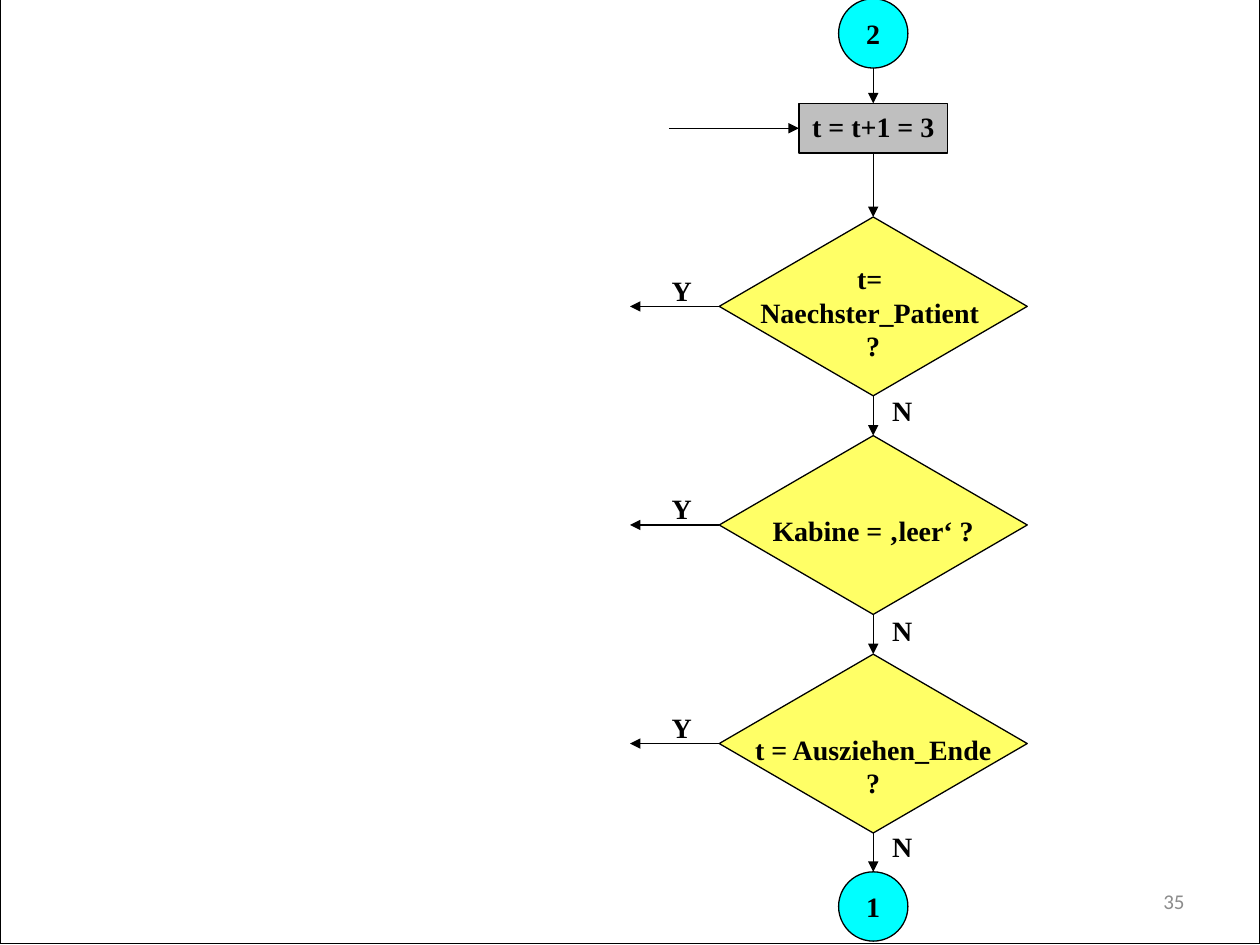
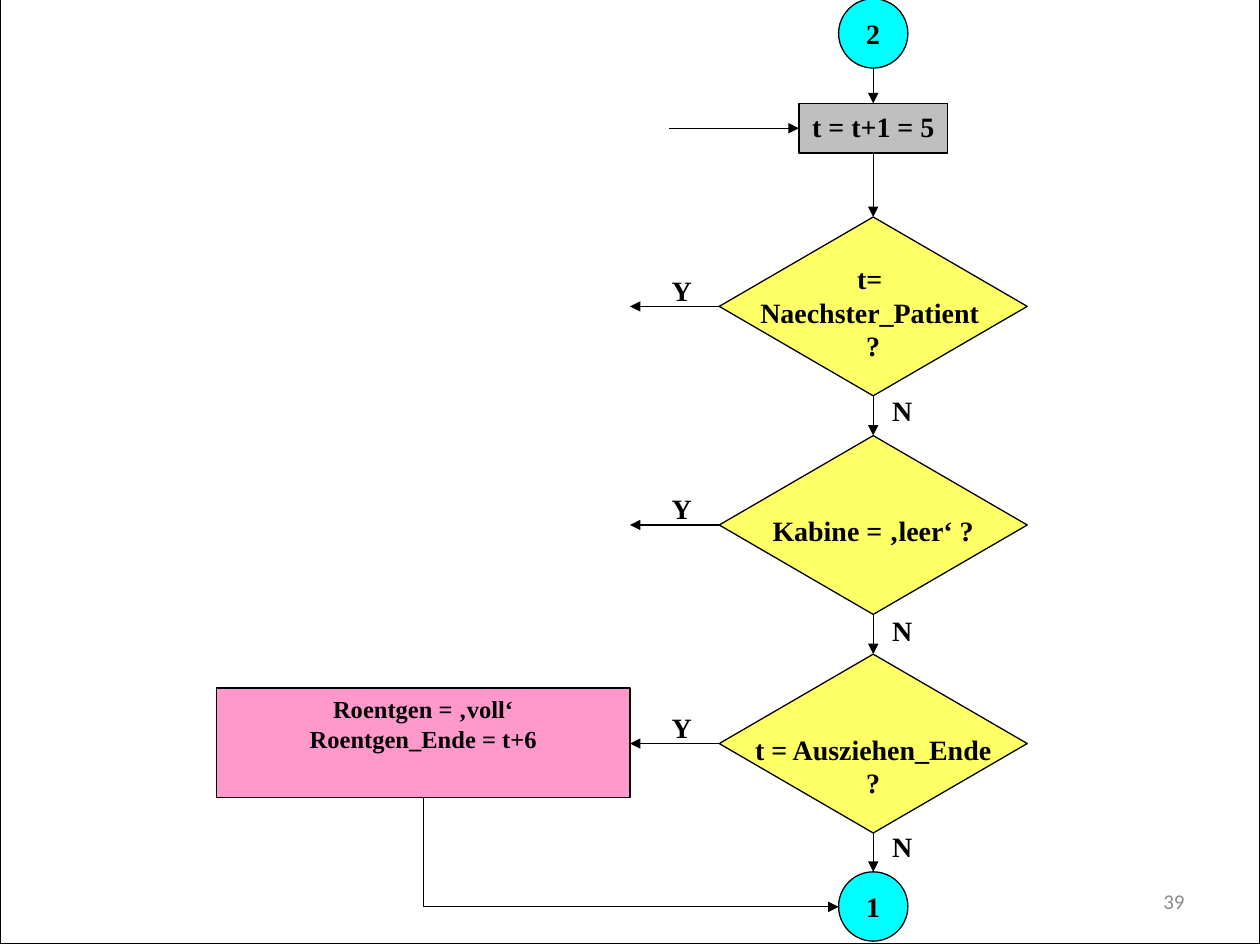
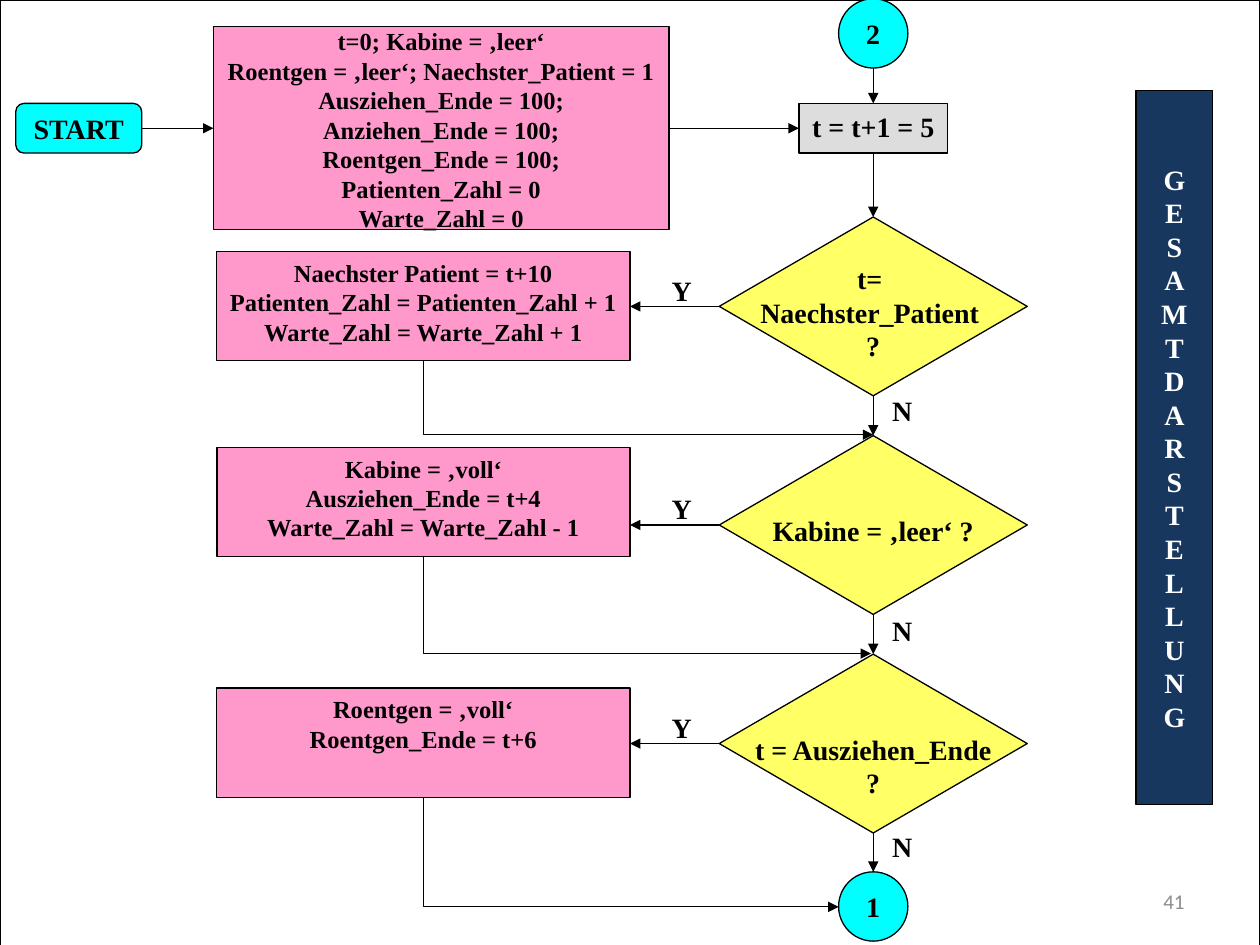
from collections import namedtuple
from dataclasses import dataclass

from lxml.etree import SubElement
from pptx import Presentation
from pptx.dml.color import RGBColor as RGB
from pptx.enum.shapes import MSO_CONNECTOR as LINE, MSO_SHAPE as SHAPE
from pptx.enum.text import MSO_ANCHOR as ANCHOR, PP_ALIGN as ALIGN
from pptx.oxml.ns import qn
from pptx.util import Pt

Box = namedtuple("Box", "x y w h")
Action = namedtuple("Action", "box lines target")


@dataclass(frozen=True)
class Theme:
    ink: str = "000000"
    paper: str = "FFFFFF"
    terminal: str = "00FFFF"
    decision: str = "FFFF66"
    action: str = "FF99CC"
    counter: str = "BFBFBF"
    counter_light: str = "DDDDDD"
    banner: str = "17375E"
    number: str = "8C8C8C"
    serif: str = "Times New Roman"
    sans: str = "Calibri"
    label_size: float = 16
    action_size: float = 14
    number_size: float = 12
    line: float = 0.75


T = Theme()

COLUMN = Box(411, -0.7, 176, 538.5)
DISC = 39.6
STEP = 124.9
DIAMOND_H = 102.2
ARROW_END = 360
ENTRY_X, ENTRY_Y = 382.3, 73.3

# Lines, top inset, and top of the "N" label relative to the diamond
DECISIONS = [
    (["t= ", "Naechster_Patient ", "?"], 0, 97.2),
    (["Kabine = ‚leer‘ ?"], 19, 98.4),
    (["t = Ausziehen_Ende", "?"], 19, 96.5),
]

ARRIVAL = Action(Box(123.8, 143.9, 236.2, 62.3),
                 ["Naechster Patient = t+10",
                  "Patienten_Zahl = Patienten_Zahl + 1",
                  "Warte_Zahl = Warte_Zahl + 1"], (499, 248.4))
UNDRESS = Action(Box(124, 255.7, 236, 62.3),
                 ["Kabine = ‚voll‘", "Ausziehen_Ende = t+4",
                  "Warte_Zahl = Warte_Zahl - 1"], (497.7, 373.5))
XRAY = Action(Box(123.8, 393.2, 236.2, 62.5),
              ["Roentgen = ‚voll‘", "Roentgen_Ende = t+6"], (479.2, 518.2))

INITIAL_VALUES = ["t=0; Kabine = ‚leer‘",
                  "Roentgen = ‚leer‘; Naechster_Patient = 1",
                  "Ausziehen_Ende = 100;", "Anziehen_Ende = 100;",
                  "Roentgen_Ende = 100;", "Patienten_Zahl = 0",
                  "Warte_Zahl = 0"]


def write(sp, lines, size=T.label_size, font=T.serif, color=T.ink, bold=True,
          align=ALIGN.CENTER, anchor=ANCHOR.TOP, insets=(7.2, 3.6, 7.2, 3.6),
          wrap=True):
    tf = sp.text_frame
    tf.word_wrap = wrap
    tf.vertical_anchor = anchor
    (tf.margin_left, tf.margin_top,
     tf.margin_right, tf.margin_bottom) = map(Pt, insets)
    for i, line in enumerate(lines):
        p = tf.paragraphs[0] if i == 0 else tf.add_paragraph()
        p.alignment = align
        r = p.add_run()
        r.text = line
        r.font.name, r.font.size, r.font.bold = font, Pt(size), bold
        r.font.color.rgb = RGB.from_string(color)


def add_shape(s, kind, box, fill=None, lines=(), **fmt):
    sp = s.shapes.add_shape(kind, *map(Pt, box))
    sp.shadow.inherit = False
    if fill:
        sp.fill.solid()
        sp.fill.fore_color.rgb = RGB.from_string(fill)
    else:
        sp.fill.background()
    sp.line.color.rgb = RGB.from_string(T.ink)
    sp.line.width = Pt(T.line)
    if lines:
        write(sp, lines, **fmt)
    return sp


def add_label(s, box, text, **fmt):
    write(s.shapes.add_textbox(*map(Pt, box)), [text], **fmt)


def add_arrow(s, x1, y1, x2, y2, kind=LINE.STRAIGHT):
    c = s.shapes.add_connector(kind, *map(Pt, (x1, y1, x2, y2)))
    c.line.color.rgb = RGB.from_string(T.ink)
    c.line.width = Pt(T.line)
    props = c.element.spPr
    SubElement(props.find(qn("a:ln")), qn("a:tailEnd"), type="triangle")
    SubElement(props, qn("a:effectLst"))
    return c


def add_corner_arrow(s, x1, y1, x2, y2):
    """Arrow that runs down from the start and then right to the end."""
    c = add_arrow(s, x1, y1, x2, y2, LINE.ELBOW)
    dx, dy = x2 - x1, y2 - y1
    c.left, c.top = Pt((x1 + x2 - dy) / 2), Pt((y1 + y2 - dx) / 2)
    c.width, c.height = Pt(dy), Pt(dx)
    props = c.element.spPr
    props.find(qn("a:prstGeom")).set("prst", "bentConnector2")
    xfrm = props.find(qn("a:xfrm"))
    xfrm.set("rot", "16200000")
    xfrm.set("flipH", "1")


def draw_decision(s, box, lines, inset, no_top):
    mid_x, mid_y = box.x + box.w / 2, box.y + box.h / 2
    add_shape(s, SHAPE.FLOWCHART_DECISION, box, T.decision, lines,
              insets=(0, inset, 0, 0), wrap=False)
    add_arrow(s, box.x, mid_y, ARROW_END, mid_y)
    add_label(s, Box(box.x - 39.5, box.y + 28.6, 36, 28), "Y")
    add_label(s, Box(mid_x - 1.5, box.y + no_top, 36, 28), "N")


def draw_column(s, box, count, counter_fill):
    """Main flow from connector 2 through the decisions to connector 1."""
    mid = box.x + box.w / 2
    counter = Box(mid - 42.5, box.y + 59.8, 85, 28.4)
    first = box.y + 124.7
    disc_tops = box.y, box.y + box.h - DISC

    for top, name in zip(disc_tops, "21"):
        add_shape(s, SHAPE.OVAL, Box(mid - DISC / 2, top, DISC, DISC),
                  T.terminal, [name], anchor=ANCHOR.MIDDLE)
    add_shape(s, SHAPE.RECTANGLE, counter, counter_fill,
              [f"t = t+1 = {count}"])
    add_arrow(s, ENTRY_X, ENTRY_Y, counter.x, ENTRY_Y)

    tops = [first + i * STEP for i in range(len(DECISIONS))]
    for top, decision in zip(tops, DECISIONS):
        draw_decision(s, Box(box.x, top, box.w, DIAMOND_H), *decision)

    starts = [disc_tops[0] + DISC, counter.y + counter.h]
    starts += [top + DIAMOND_H for top in tops]
    for start, end in zip(starts, [counter.y, *tops, disc_tops[1]]):
        add_arrow(s, mid, start, mid, end)


def draw_action(s, box, lines, target):
    add_shape(s, SHAPE.RECTANGLE, box, T.action, lines, size=T.action_size)
    add_corner_arrow(s, box.x + box.w / 2, box.y + box.h, *target)


def draw_start(s, box):
    """START and the initial values, in a box that spans both."""
    start = Box(box.x, box.y + 44, 72, 28.4)
    values = Box(box.x + 113, box.y, box.w - 113, box.h)
    add_shape(s, SHAPE.ROUNDED_RECTANGLE, start, T.terminal, ["START"])
    add_shape(s, SHAPE.RECTANGLE, values, T.action, INITIAL_VALUES,
              size=T.action_size, insets=(7.2, 0, 7.2, 0))
    add_arrow(s, start.x + start.w, ENTRY_Y, values.x, ENTRY_Y)


def draw_banner(s, box):
    sp = add_shape(s, SHAPE.RECTANGLE, box, T.banner, ["GESAMTDARSTELLUNG"],
                   color=T.paper)
    sp.element.txBody.bodyPr.set("vert", "wordArtVert")


def add_flow_slide(prs, number, count, counter_fill=T.counter, frame_top=-2.2,
                   actions=()):
    s = prs.slides.add_slide(prs.slide_layouts[6])
    add_shape(s, SHAPE.RECTANGLE, Box(0, frame_top, 720, 541.5))
    draw_column(s, COLUMN, count, counter_fill)
    for action in actions:
        draw_action(s, *action)
    add_label(s, Box(516, 500.5, 168, 28.8), str(number), size=T.number_size,
              font=T.sans, color=T.number, bold=False, align=ALIGN.RIGHT,
              anchor=ANCHOR.MIDDLE)
    return s


def main():
    prs = Presentation()
    prs.slide_width, prs.slide_height = Pt(720), Pt(540)
    add_flow_slide(prs, 35, 3)
    add_flow_slide(prs, 39, 5, actions=[XRAY])
    s = add_flow_slide(prs, 41, 5, T.counter_light, 0,
                       [ARRIVAL, UNDRESS, XRAY])
    draw_start(s, Box(9, 15.1, 373.3, 116.2))
    draw_banner(s, Box(649.2, 51.8, 43.8, 408))
    prs.save("out.pptx")


if __name__ == "__main__":
    main()
